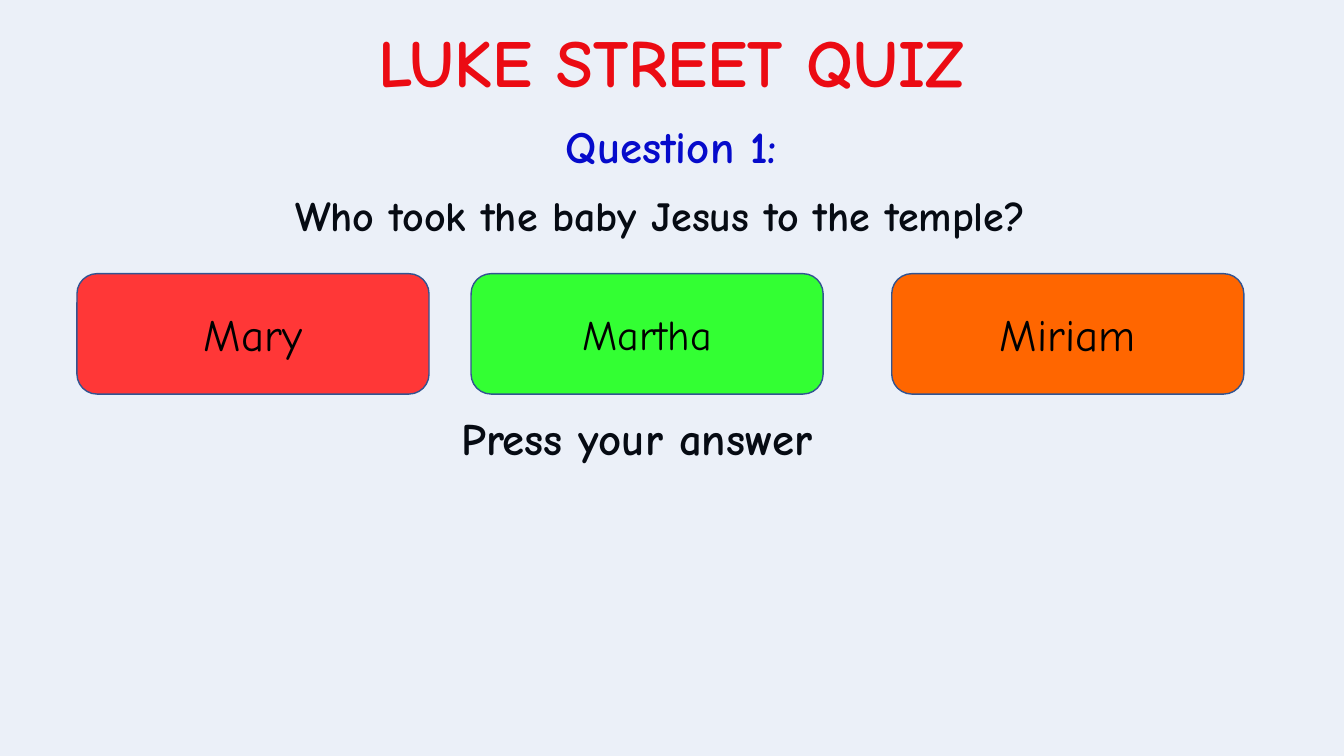
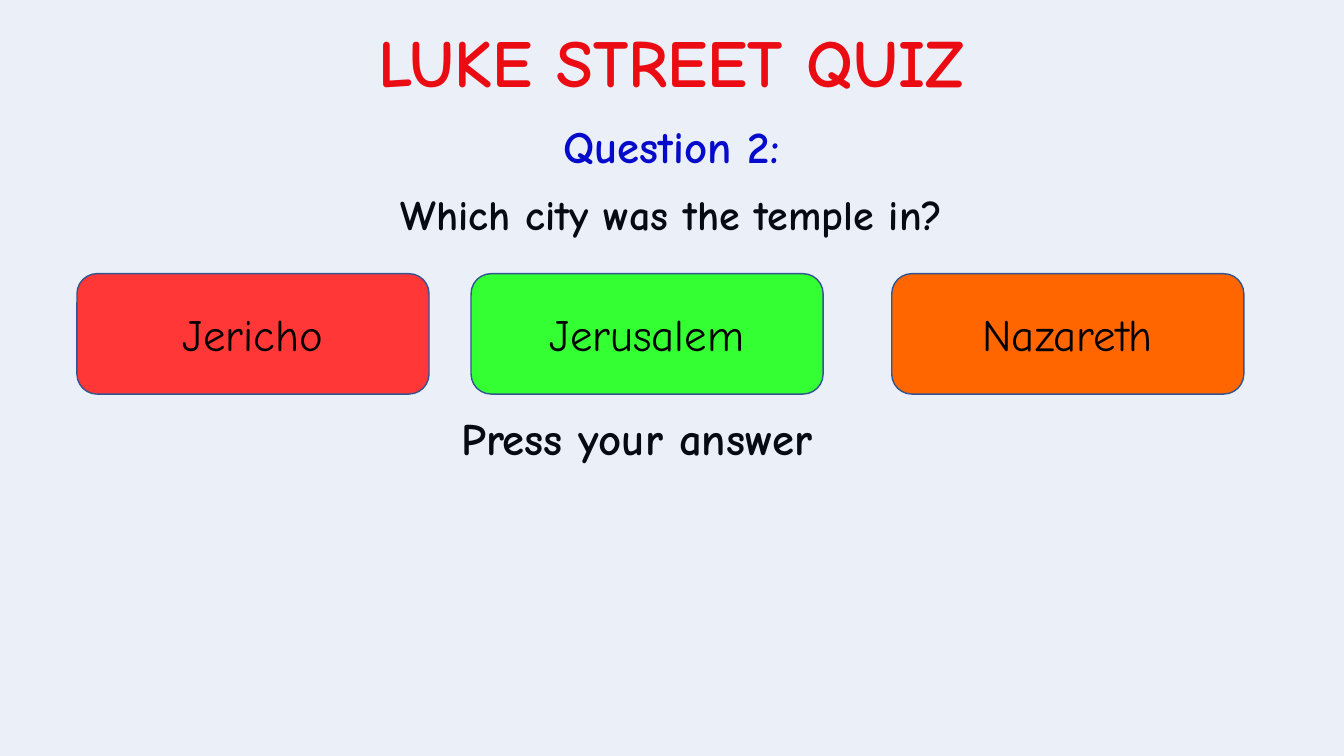
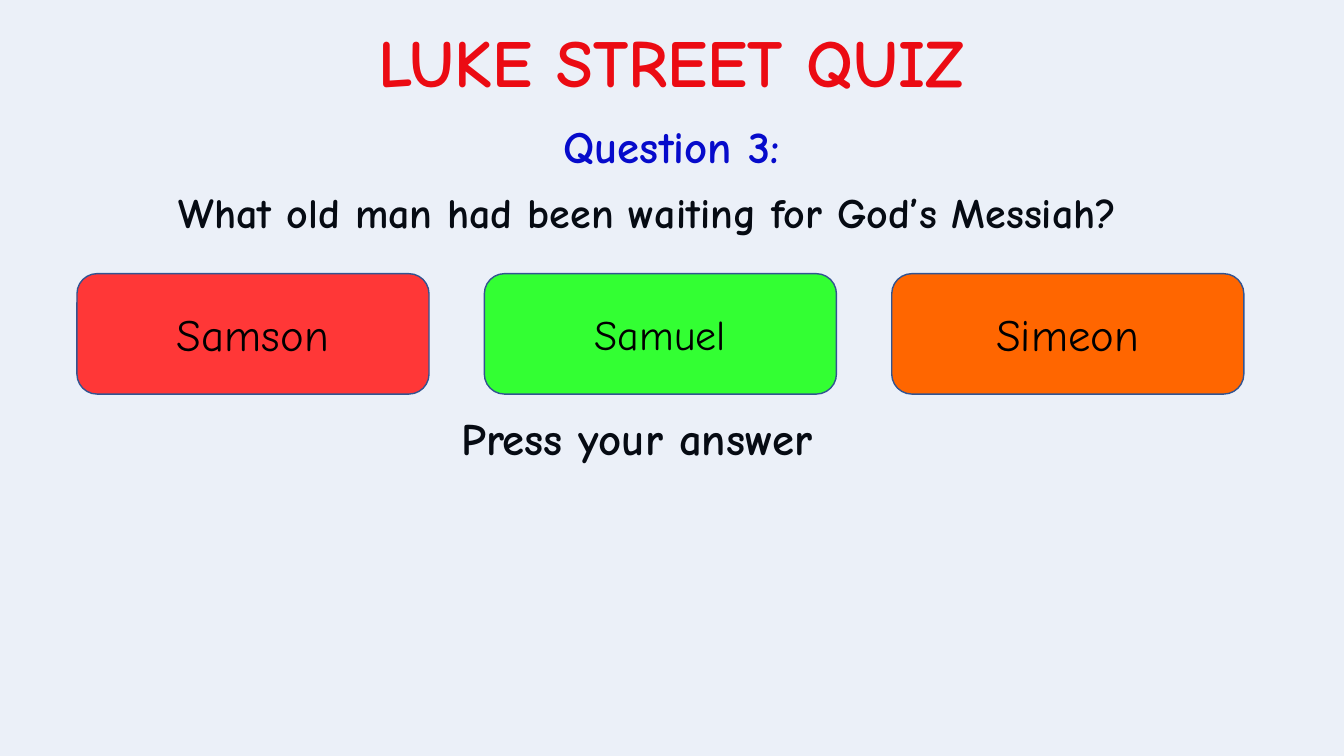
from lxml import etree
from pptx import Presentation
from pptx.dml.color import RGBColor
from pptx.enum.shapes import MSO_SHAPE
from pptx.enum.text import MSO_ANCHOR, PP_ALIGN
from pptx.oxml.ns import qn
from pptx.util import Pt

FONT = "Comic Neue"
COLORS = {
    "title": "FF0000", "number": "0000CC", "text": "000000",
    "veil": "4472C4", "outline": "325491",
    "first": "FF3737", "second": "33FF33", "third": "FF6600",
}
SLIDE_W, SLIDE_H = 960, 540
VEIL_OPACITY = 10

TITLE = "LUKE STREET QUIZ"
PROMPT = "Press your answer"
TITLE_BOX = (224.5, 10.8, 510, 65.5)
NUMBER_BOX = (321, 81.4, 317.5, 46)
PROMPT_BOX = (322.5, 294.5, 484.5, 51.8)

ANSWER_COLORS = ("first", "second", "third")
ANSWER_LEFT, ANSWER_TOP, ANSWER_W, ANSWER_H = 55, 195.5, 251.5, 86
ANSWER_PITCH = 291

# middle_shift moves the middle answer off the even spacing
QUESTIONS = [
    {"question": "Who took the baby Jesus to the temple?",
     "box": (55.4, 138.2, 833, 85.7), "leading": 30, "middle_shift": -9.5,
     "answers": [("Mary", 32), ("Martha", 30), ("Miriam", 32)]},
    {"question": "Which city was the temple in?",
     "box": (208.8, 127.4, 542.2, 85.7), "leading": 40, "middle_shift": -9.5,
     "answers": [("Jericho", 32), ("Jerusalem", 32), ("Nazareth", 32)]},
    {"question": "What old man had been waiting for God’s Messiah?",
     "box": (37.4, 135.4, 851, 51.8), "leading": 30, "middle_shift": 0,
     "answers": [("Samson", 32), ("Samuel", 30), ("Simeon", 32)]},
]


def rgb(name):
    return RGBColor.from_string(COLORS[name])


def write(frame, text, size, color="text", bold=True, align=PP_ALIGN.CENTER):
    frame.word_wrap = True
    paragraph = frame.paragraphs[0]
    paragraph.text = text
    paragraph.alignment = align
    font = paragraph.font
    font.name, font.size, font.bold = FONT, Pt(size), bold
    font.color.rgb = rgb(color)
    return paragraph


def add_text(slide, box, text, size, **style):
    frame = slide.shapes.add_textbox(*map(Pt, box)).text_frame
    return write(frame, text, size, **style)


def add_filled(slide, preset, box, color):
    shape = slide.shapes.add_shape(preset, *map(Pt, box))
    shape.shadow.inherit = False
    shape.fill.solid()
    shape.fill.fore_color.rgb = rgb(color)
    return shape


def add_veil(slide):
    """Tint the whole slide, texts included, with a translucent blue."""
    veil = add_filled(slide, MSO_SHAPE.RECTANGLE, (0, 0, SLIDE_W, SLIDE_H), "veil")
    veil.line.fill.background()
    tint = veil.fill._xPr.find(qn("a:solidFill"))[0]
    etree.SubElement(tint, qn("a:alpha"), val=str(VEIL_OPACITY * 1000))


def add_answers(slide, answers, middle_shift):
    for i, ((answer, size), color) in enumerate(zip(answers, ANSWER_COLORS)):
        left = ANSWER_LEFT + i * ANSWER_PITCH + (middle_shift if i == 1 else 0)
        button = add_filled(slide, MSO_SHAPE.ROUNDED_RECTANGLE,
                            (left, ANSWER_TOP, ANSWER_W, ANSWER_H), color)
        button.line.color.rgb = rgb("outline")
        button.line.width = Pt(1)
        button.text_frame.vertical_anchor = MSO_ANCHOR.MIDDLE
        write(button.text_frame, answer, size, bold=False)


def add_question_slide(deck, number, item):
    slide = deck.slides.add_slide(deck.slide_layouts[6])
    add_text(slide, TITLE_BOX, TITLE, 48, color="title")
    add_text(slide, NUMBER_BOX, f"Question {number}:", 32, color="number")
    question = add_text(slide, item["box"], item["question"], 30)
    question.line_spacing = Pt(item["leading"])
    question.space_before = Pt(10)
    prompt = add_text(slide, PROMPT_BOX, PROMPT, 32, align=PP_ALIGN.LEFT)
    prompt.line_spacing = 0.9
    prompt.space_before = Pt(7.5)
    add_veil(slide)
    add_answers(slide, item["answers"], item["middle_shift"])


def main():
    deck = Presentation()
    deck.slide_width, deck.slide_height = Pt(SLIDE_W), Pt(SLIDE_H)
    for number, item in enumerate(QUESTIONS, start=1):
        add_question_slide(deck, number, item)
    deck.save("out.pptx")


if __name__ == "__main__":
    main()
